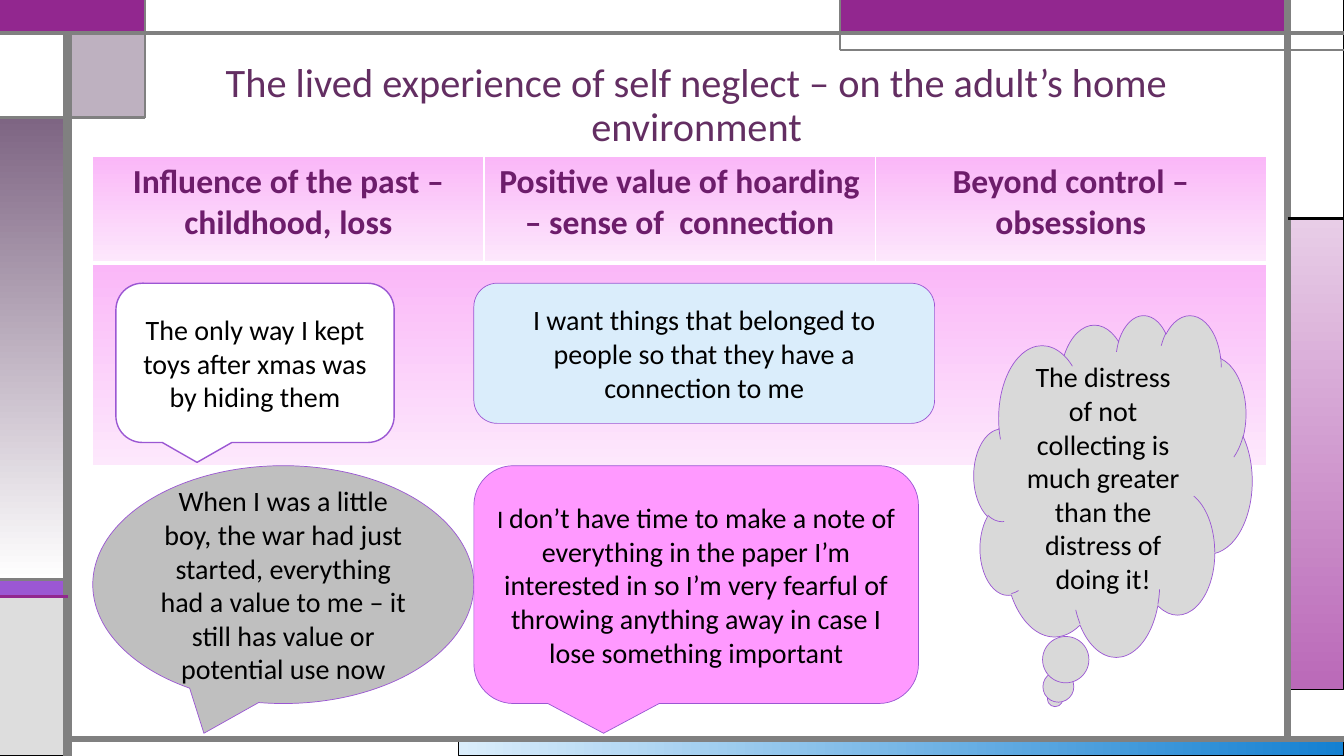
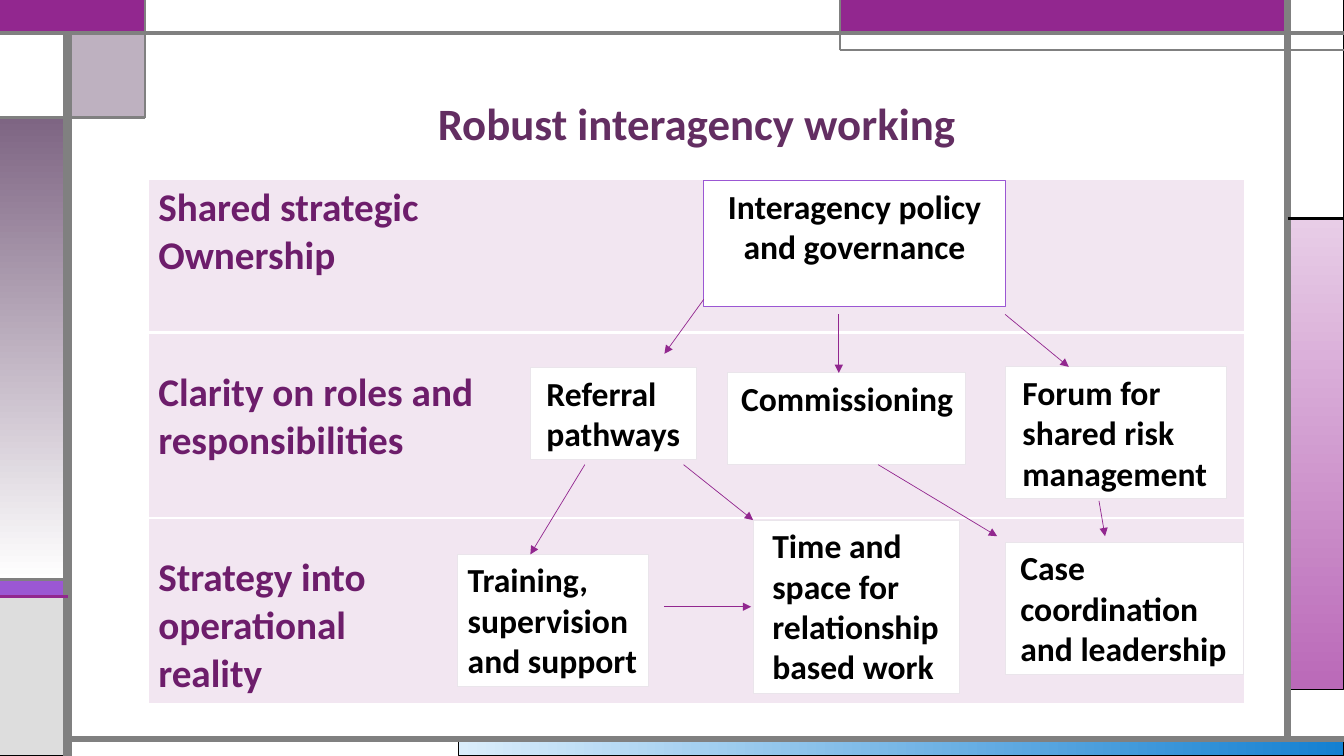
from pptx import Presentation
from pptx.dml.color import RGBColor
from pptx.enum.shapes import MSO_CONNECTOR, MSO_SHAPE
from pptx.enum.text import MSO_ANCHOR, MSO_AUTO_SIZE, PP_ALIGN
from pptx.oxml import parse_xml
from pptx.oxml.ns import nsdecls, qn
from pptx.util import Inches, Pt
from lxml.etree import SubElement

# Colours
WHITE = RGBColor(0xFF, 0xFF, 0xFF)
BLACK = RGBColor(0, 0, 0)
GREY = RGBColor(0x80, 0x80, 0x80)
SILVER = RGBColor(0xBF, 0xBF, 0xBF)
CLOUD = RGBColor(0xD9, 0xD9, 0xD9)
PALE = RGBColor(0xDD, 0xDD, 0xDD)
PLUM = RGBColor(0x92, 0x27, 0x8F)
VIOLET = RGBColor(0x9B, 0x57, 0xD3)
INDIGO = RGBColor(0x75, 0x5D, 0xD9)
MAUVE = RGBColor(0x7E, 0x65, 0x83)
LILAC = RGBColor(0xE8, 0xCD, 0xE7)
ORCHID = RGBColor(0xBA, 0x69, 0xB8)
SKY = RGBColor(0xDA, 0xED, 0xFB)
BLUE = RGBColor(0x14, 0x80, 0xD1)
PINK = RGBColor(0xFF, 0x99, 0xFF)
ROSE = RGBColor(0xFA, 0xB7, 0xF8)
BLUSH = RGBColor(0xFD, 0xE8, 0xFC)
HAZE = RGBColor(0xF2, 0xE6, 0xF1)
EDGE = RGBColor(0xEA, 0xE5, 0xEB)
TITLE = RGBColor(0x63, 0x2E, 0x62)
HEAD = RGBColor(0x6D, 0x1D, 0x6B)

FONT = "Calibri"
WIDE, HIGH = 13.33, 7.5

# Frame grid
LEFT, RIGHT, TOP, BASE = 0.67, 12.77, 0.33, 7.33
TAB, MID, STEP = 1.44, 8.33, 1.17
LOW, FOOT, SIDE = 5.75, 5.92, 2.17

# Frame panels: left, top, right, bottom, fill, line colour, line width
PANELS = [
    (4.55, BASE, WIDE, HIGH, (SKY, BLUE, 0), BLACK, 0.75),
    (RIGHT, SIDE, WIDE, 6.84, (LILAC, ORCHID, 270), BLACK, 0.75),
    (0, LOW, LEFT, FOOT, VIOLET, BLACK, 0.75),
    (0, FOOT, LEFT, HIGH, PALE, BLACK, 0.75),
    (RIGHT, 0, WIDE, SIDE, WHITE, BLACK, 0.75),
    (MID, 0, RIGHT, TOP, PLUM, INDIGO, 0.75),
    (LEFT, TOP, TAB, STEP, MAUVE, BLACK, 0.75),
    (0, STEP, LEFT, LOW, (MAUVE, WHITE, 270), BLACK, 0.75),
    (0, TOP, LEFT, STEP, WHITE, BLACK, 0.75),
    (0, 0, TAB, TOP, PLUM, PLUM, 1.5),
    (TAB, 0, MID, TOP, WHITE, GREY, 0.75),
]
SHEER = (LEFT, TOP)  # corner of the half-clear panel

# Frame rules: start x, y, end x, y, colour, width
RULES = [
    (LEFT, HIGH, LEFT, TOP, GREY, 6),
    (LEFT, BASE, WIDE, BASE, GREY, 4.5),
    (RIGHT, BASE, RIGHT, 0, GREY, 4.5),
    (0, TOP, WIDE, TOP, GREY, 3),
    (WIDE, 0.5, MID, 0.5, GREY, 1.5),
    (MID, 0.5, MID, 0, GREY, 1.5),
    (RIGHT, SIDE, WIDE, SIDE, BLACK, 2.25),
    (TAB, 0, TAB, STEP, GREY, 1.5),
    (TAB, STEP, 0, STEP, GREY, 2.25),
    (LEFT, LOW, 0, LOW, GREY, 2.25),
    (LEFT, FOOT, 0, FOOT, PLUM, 2.25),
]


def paint(fill, hue):
    """Fill with one colour, or with (first, last, angle)."""
    if isinstance(hue, RGBColor):
        fill.solid()
        fill.fore_color.rgb = hue
        return
    first, last, angle = hue
    fill.gradient()
    fill.gradient_angle = angle
    for stop, tone in zip(fill.gradient_stops, (first, last)):
        stop.color.rgb = tone


class Deck:
    def __init__(self):
        self.file = Presentation()
        self.file.slide_width = Inches(WIDE)
        self.file.slide_height = Inches(HIGH)
        self.slide = None

    def page(self, title, size, bold=False):
        self.slide = self.file.slides.add_slide(self.file.slide_layouts[5])
        self.frame()
        head = self.slide.shapes.title
        head.left, head.top = Inches(1.66), Inches(0.58)
        head.width, head.height = Inches(10.5), Inches(0.96)
        text = head.text_frame
        text.word_wrap = True
        text.auto_size = MSO_AUTO_SIZE.NONE
        text.vertical_anchor = MSO_ANCHOR.BOTTOM
        para = text.paragraphs[0]
        para.line_spacing = 0.9
        self.say(para, title, size, TITLE, bold, PP_ALIGN.CENTER)

    def frame(self):
        for x, y, right, low, hue, edge, width in PANELS:
            part = self.shape(MSO_SHAPE.RECTANGLE, x, y, right - x, low - y,
                              hue, edge, width)
            if (x, y) == SHEER:
                tone = part._element.spPr.find(qn("a:solidFill"))[0]
                SubElement(tone, qn("a:alpha"), val="50000")
        for x, y, end, low, hue, width in RULES:
            self.line(x, y, end, low, hue, width)

    def say(self, para, words, size, hue, bold=False, align=PP_ALIGN.LEFT):
        para.alignment = align
        run = para.add_run()
        run.text = words
        font = run.font
        font.name, font.size, font.bold = FONT, Pt(size), bold
        font.color.rgb = hue

    def shape(self, kind, x, y, width, height, hue, edge, weight):
        part = self.slide.shapes.add_shape(
            kind, Inches(x), Inches(y), Inches(width), Inches(height))
        part.shadow.inherit = False
        paint(part.fill, hue)
        part.line.color.rgb = edge
        part.line.width = Pt(weight)
        return part

    def line(self, x, y, end, low, hue, width, arrow=False):
        rule = self.slide.shapes.add_connector(
            MSO_CONNECTOR.STRAIGHT, Inches(x), Inches(y), Inches(end), Inches(low))
        rule.line.color.rgb = hue
        rule.line.width = Pt(width)
        props = rule._element.spPr
        if arrow:
            SubElement(props.find(qn("a:ln")), qn("a:tailEnd"), type="triangle")
        SubElement(props, qn("a:effectLst"))

    def quote(self, kind, place, hue, runs, weight=0.5):
        part = self.shape(kind, *place, hue, VIOLET, weight)
        text = part.text_frame
        text.word_wrap = True
        text.vertical_anchor = MSO_ANCHOR.MIDDLE
        for words, size in runs:
            self.say(text.paragraphs[0], words, size, BLACK, align=PP_ALIGN.CENTER)

    def box(self, place, words, inset, edge=EDGE, weight=0.75, align=PP_ALIGN.LEFT):
        text = self.shape(MSO_SHAPE.RECTANGLE, *place, WHITE, edge, weight).text_frame
        text.word_wrap = True
        text.vertical_anchor = MSO_ANCHOR.TOP
        text.margin_left, text.margin_right = Inches(inset), Inches(0.05)
        self.say(text.paragraphs[0], words, 24, BLACK, True, align)

    def grid(self, x, y, cols, rows, hue):
        table = self.slide.shapes.add_table(
            len(rows), len(cols), Inches(x), Inches(y),
            Inches(sum(cols)), Inches(sum(rows))).table
        table.first_row = table.horz_banding = False
        for col, width in zip(table.columns, cols):
            col.width = Inches(width)
        for i, (row, height) in enumerate(zip(table.rows, rows)):
            row.height = Inches(height)
            for cell in row.cells:
                self.border(cell, 3 if i == 1 else 1, 3 if i == 0 else 1)
                paint(cell.fill, hue)
        return table

    def border(self, cell, top, base):
        props = cell._tc.get_or_add_tcPr()
        for side, width in (("L", 1), ("R", 1), ("T", top), ("B", base)):
            props.append(parse_xml(
                f'<a:ln{side} {nsdecls("a")} w="{Pt(width)}"><a:solidFill>'
                f'<a:srgbClr val="{WHITE}"/></a:solidFill></a:ln{side}>'))


def home(deck):
    deck.page("The lived experience of self neglect – on the adult’s home environment", 28.8)

    # Themes
    table = deck.grid(0.92, 1.55, [3.88] * 3, [1.06, 2.01], (ROSE, BLUSH, 270))
    table.cell(1, 0).merge(table.cell(1, 2))
    heads = ["Influence of the past – childhood, loss",
             "Positive value of hoarding – sense of  connection",
             "Beyond control – obsessions"]
    for cell, words in zip(table.rows[0].cells, heads):
        deck.say(cell.text_frame.paragraphs[0], words, 24, HEAD, True, PP_ALIGN.CENTER)

    # Quotes
    bubble = MSO_SHAPE.ROUNDED_RECTANGULAR_CALLOUT
    deck.quote(bubble, (1.15, 2.81, 2.76, 1.58), WHITE,
               [("The only way I kept toys after xmas was by hiding them", 20)], 1)
    deck.quote(MSO_SHAPE.OVAL_CALLOUT, (0.92, 4.62, 3.78, 2.36), SILVER,
               [("When I was a little boy, the war had just started, everything had "
                 "a value to me – it still has value or potential use now", 20)])
    deck.quote(MSO_SHAPE.ROUNDED_RECTANGLE, (4.7, 2.81, 4.57, 1.39), SKY,
               [("I want things that belonged to people so that they have "
                 "a connection to me", 20)])
    deck.quote(MSO_SHAPE.CLOUD_CALLOUT, (9.66, 3.12, 2.76, 3.39), CLOUD,
               [("The distress of not collecting is much greater than "
                 "the distress of doing it!", 20)])
    deck.quote(bubble, (4.7, 4.62, 4.41, 2.36), PINK,
               [("I ", 18),
                ("don’t have time to make a note of everything in the paper I’m "
                 "interested in so I’m very fearful of throwing anything away "
                 "in case I lose something important", 20)])


def agency(deck):
    deck.page("Robust interagency working", 32, True)

    # Levels
    table = deck.grid(1.47, 1.78, [10.87], [1.52, 1.84, 1.84], HAZE)
    levels = [(0.05, ["Shared strategic", "Ownership"]),
              (0.36, ["Clarity on roles and", "responsibilities"]),
              (0.36, ["Strategy into", "operational", "reality"])]
    for row, (gap, lines) in zip(table.rows, levels):
        cell = row.cells[0]
        cell.margin_top = Inches(gap)
        text = cell.text_frame
        for i, words in enumerate(lines):
            para = text.add_paragraph() if i else text.paragraphs[0]
            deck.say(para, words, 28, HEAD, True)

    # Boxes
    deck.box((6.98, 1.79, 2.99, 1.25), "Interagency policy and governance", 0.05,
             VIOLET, 1, PP_ALIGN.CENTER)
    for place, words, inset in [
        ((5.26, 3.65, 1.65, 0.91), "Referral pathways", 0.16),
        ((7.22, 3.7, 2.36, 0.91), "Commissioning", 0.13),
        ((9.97, 3.64, 2.19, 1.31), "Forum for shared risk management", 0.17),
        ((4.54, 5.5, 1.89, 1.31), "Training, supervision and support", 0.1),
        ((7.47, 5.16, 2.05, 1.72), "Time and space for relationship based work", 0.19),
        ((9.97, 5.38, 2.36, 1.31), "Case coordination and leadership", 0.15),
    ]:
        deck.box(place, words, inset)

    # Arrows
    for ends in [
        (6.98, 2.97, 6.59, 3.51), (8.32, 3.12, 8.32, 3.7),
        (9.97, 3.12, 10.6, 3.64), (5.8, 4.61, 5.26, 5.5),
        (6.78, 4.61, 7.47, 5.16), (6.59, 6.02, 7.45, 6.02),
        (8.71, 4.61, 9.89, 5.32), (10.9, 4.97, 10.96, 5.32),
    ]:
        deck.line(*ends, PLUM, 0.5, arrow=True)


def main():
    deck = Deck()
    home(deck)
    agency(deck)
    deck.file.save("out.pptx")


if __name__ == "__main__":
    main()
